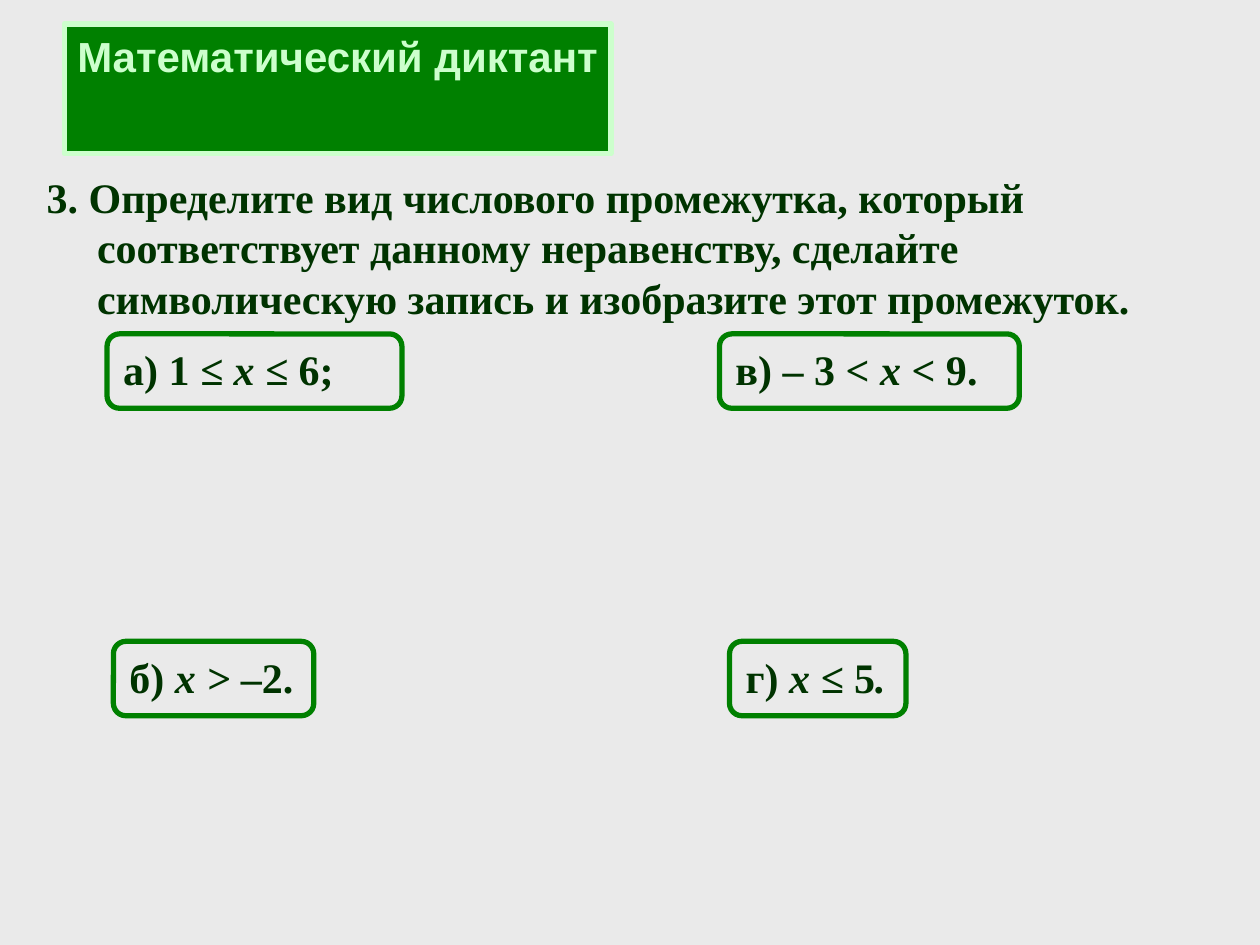
from lxml.etree import SubElement
from pptx import Presentation
from pptx.dml.color import RGBColor
from pptx.enum.shapes import MSO_SHAPE
from pptx.enum.text import MSO_ANCHOR, MSO_AUTO_SIZE, PP_ALIGN
from pptx.oxml.ns import qn
from pptx.util import Inches, Pt

GRAY = RGBColor(0xEA, 0xEA, 0xEA)
GREEN = RGBColor(0x00, 0x80, 0x00)
MINT = RGBColor(0xCC, 0xFF, 0xCC)
DARK = RGBColor(0x00, 0x33, 0x00)

# Content
TITLE = "Математический диктант"
TASK = ("3. Определите вид числового промежутка, который соответствует "
        "данному неравенству, сделайте символическую запись и изобразите "
        "этот промежуток.")
# Left, top, width, wrap, then (text, italic) runs
ITEMS = [
    (0.85, 2.65, 2.34, True, [("а) 1 ", False), ("≤ x ≤ ", True), ("6;", False)]),
    (0.9, 5.09, 1.59, False, [("б) ", False), ("x > ", True), ("–2.", False)]),
    (5.71, 2.65, 2.38, True, [("в) – 3 ", False), ("< x < ", True), ("9.", False)]),
    (5.79, 5.09, 1.4, False,
     [("г) ", False), ("x ≤ ", True), ("5", False), (".", True)]),
]
HIGH = 0.59


def place(shape, left, top, width, height):
    shape.left, shape.top = Inches(left), Inches(top)
    shape.width, shape.height = Inches(width), Inches(height)


def edge(shape, color):
    shape.line.color.rgb = color
    shape.line.width = Pt(3)


def write(shape, runs, face, color, align=PP_ALIGN.LEFT, wrap=True):
    frame = shape.text_frame
    frame.word_wrap = wrap
    frame.auto_size = MSO_AUTO_SIZE.NONE
    frame.vertical_anchor = MSO_ANCHOR.TOP
    para = frame.paragraphs[0]
    para.alignment = align
    para.space_before = Pt(0)
    font = para.font
    font.name, font.size, font.bold = face, Pt(24), True
    font.color.rgb = color
    for text, slant in runs:
        run = para.add_run()
        run.text = text
        if slant:
            run.font.italic = True
    return para


deck = Presentation()
deck.slide_width, deck.slide_height = Inches(10), Inches(7.5)
slide = deck.slides.add_slide(deck.slide_layouts[1])
slide.background.fill.solid()
slide.background.fill.fore_color.rgb = GRAY

# Title on a rounded plate
title = slide.shapes.title
place(title, 0.51, 0.19, 4.34, 1.03)
shape_props = title.element.spPr
geom = SubElement(shape_props, qn("a:prstGeom"), prst="roundRect")
SubElement(geom, qn("a:avLst"))
title.fill.solid()
title.fill.fore_color.rgb = GREEN
edge(title, MINT)
write(title, [(TITLE, False)], "Arial", MINT, PP_ALIGN.CENTER)

# Task text with a hanging indent and no bullet
body = slide.placeholders[1]
place(body, 0.27, 1.31, 9.73, 1.3)
para = write(body, [(TASK, False)], "Times New Roman", DARK)
props = para._p.get_or_add_pPr()
props.set("marL", str(Inches(0.4)))
props.set("indent", str(Inches(-0.4)))
props.find(qn("a:spcBef")).addnext(props.makeelement(qn("a:buNone"), {}))

# Inequalities
for left, top, width, wrap, runs in ITEMS:
    box = slide.shapes.add_shape(MSO_SHAPE.ROUNDED_RECTANGLE, Inches(left),
                                 Inches(top), Inches(width), Inches(HIGH))
    box.shadow.inherit = False
    box.fill.background()
    edge(box, GREEN)
    write(box, runs, "Times New Roman", DARK, wrap=wrap)

deck.save("out.pptx")
